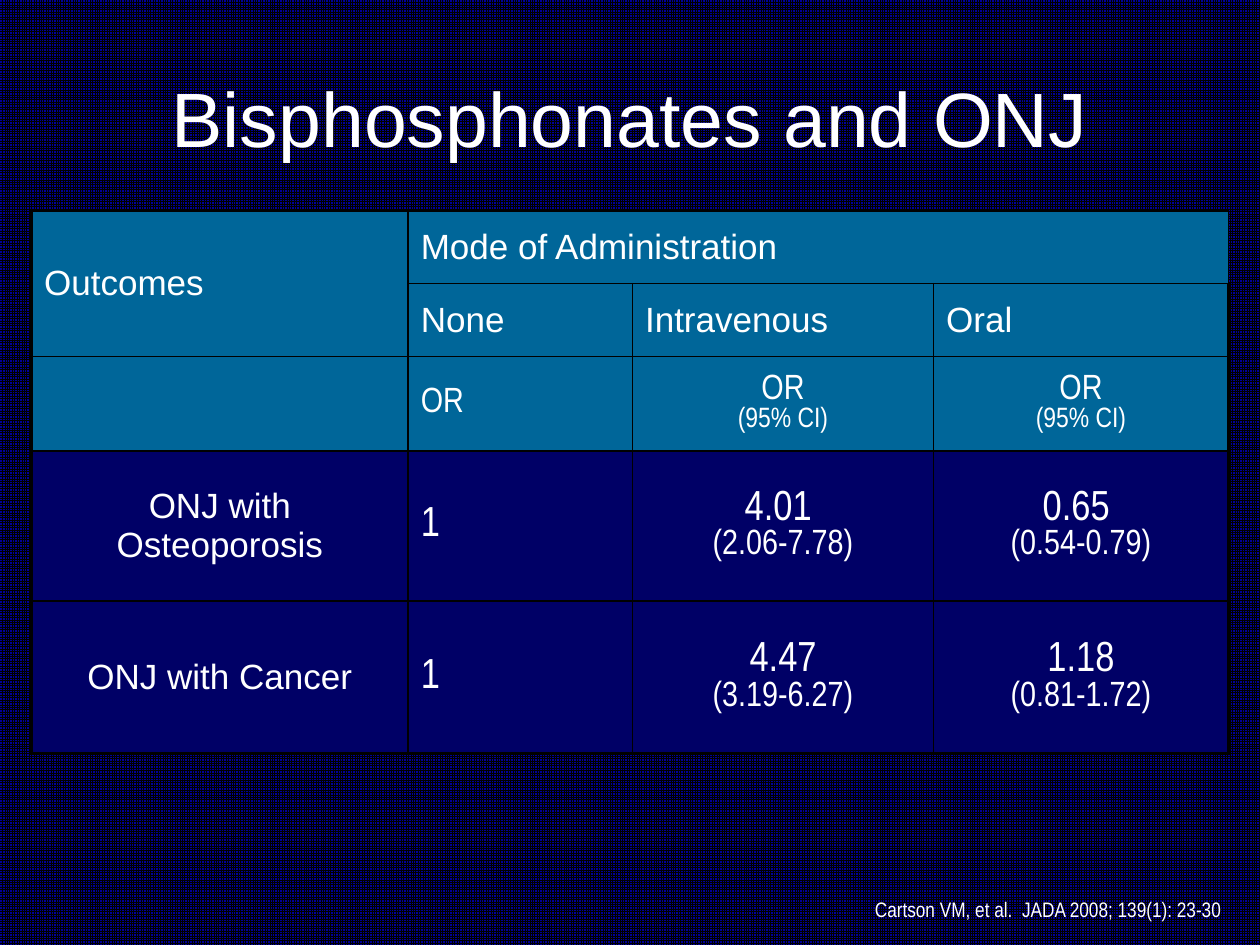
from dataclasses import dataclass
from lxml.etree import SubElement as Sub
from pptx import Presentation
from pptx.dml.color import RGBColor as Rgb
from pptx.enum.dml import MSO_PATTERN as Pattern
from pptx.enum.text import MSO_ANCHOR as Anchor, PP_ALIGN as Align
from pptx.oxml.ns import qn
from pptx.util import Inches, Pt

HUES = {"ink": "FFFFFF", "line": "000000", "back": "000099",
        "head": "006699", "body": "000066"}
WIDE, SLIM = "Arial", "Arial Narrow"
COLS = [2.99, 1.78, 2.39, 2.34]
ROWS = [0.58, 0.58, 0.75, 1.19, 1.21]
HEADS = 3


@dataclass
class Line:
    text: str
    size: float
    face: str = WIDE


@dataclass
class Item:
    row: int
    col: int
    lines: list[Line]
    align: Align = Align.LEFT


def hue(name: str) -> Rgb:
    return Rgb.from_string(HUES[name])


def write(frame, lines: list[Line], align: Align) -> None:
    frame.word_wrap = True
    for i, line in enumerate(lines):
        para = frame.add_paragraph() if i else frame.paragraphs[0]
        para.alignment = align
        run = para.add_run()
        run.text = line.text
        run.font.size = Pt(line.size)
        run.font.name = line.face
        run.font.color.rgb = hue("ink")


def label(slide, box: tuple, line: Line, align: Align, anchor: Anchor) -> None:
    frame = slide.shapes.add_textbox(*map(Inches, box)).text_frame
    frame.vertical_anchor = anchor
    write(frame, [line], align)


def edge(cell, side: str, width: float) -> None:
    line = Sub(cell._tc.get_or_add_tcPr(), qn(f"a:ln{side}"), w=str(Pt(width)))
    Sub(Sub(line, qn("a:solidFill")), qn("a:srgbClr"), val=HUES["line"])


def style(cell, row: int, col: int) -> None:
    outer = {"L": col == 0, "R": col == len(COLS) - 1,
             "T": row == 0, "B": row == len(ROWS) - 1}
    for side, rim in outer.items():
        edge(cell, side, 2.25 if rim else 1)
    cell.fill.solid()
    cell.fill.fore_color.rgb = hue("head" if row < HEADS else "body")
    cell.vertical_anchor = Anchor.MIDDLE


def pair(row: int, col: int, top: str, low: str, size: float) -> Item:
    lines = [Line(top, size, SLIM), Line(low, size - 4, SLIM)]
    return Item(row, col, lines, Align.CENTER)


ITEMS = [
    Item(0, 0, [Line("Outcomes", 20)]),
    Item(0, 1, [Line("Mode of Administration", 20)]),
    *[Item(1, i, [Line(text, 20)])
      for i, text in enumerate(["None", "Intravenous", "Oral"], 1)],
    Item(2, 1, [Line("OR", 20, SLIM)]),
    *[pair(2, col, "OR", "(95% CI)", 20) for col in (2, 3)],
    *[Item(row, 0, [Line(text, 20)], Align.CENTER)
      for row, text in enumerate(["ONJ with Osteoporosis", "ONJ with Cancer"], HEADS)],
    *[Item(row, 1, [Line("1", 24, SLIM)]) for row in (3, 4)],
    pair(3, 2, "4.01 ", "(2.06-7.78)", 24),
    pair(3, 3, "0.65 ", "(0.54-0.79)", 24),
    pair(4, 2, "4.47", "(3.19-6.27)", 24),
    pair(4, 3, "1.18", "(0.81-1.72)", 24),
]


def grid(slide) -> None:
    box = (0.25, 1.67, sum(COLS), sum(ROWS))
    table = slide.shapes.add_table(len(ROWS), len(COLS), *map(Inches, box)).table
    table.first_row = table.horz_banding = False
    for col, width in zip(table.columns, COLS):
        col.width = Inches(width)
    for row, height in zip(table.rows, ROWS):
        row.height = Inches(height)
    for row in range(len(ROWS)):
        for col in range(len(COLS)):
            style(table.cell(row, col), row, col)
    table.cell(0, 0).merge(table.cell(1, 0))
    table.cell(0, 1).merge(table.cell(0, 3))
    for item in ITEMS:
        write(table.cell(item.row, item.col).text_frame, item.lines, item.align)


def main() -> None:
    deck = Presentation()
    deck.slide_width, deck.slide_height = Inches(10), Inches(7.5)
    slide = deck.slides.add_slide(deck.slide_layouts[6])
    fill = slide.background.fill
    fill.patterned()
    fill.pattern = Pattern.SMALL_GRID
    fill.fore_color.rgb = hue("line")
    fill.back_color.rgb = hue("back")
    label(slide, (0.5, 0.3, 9, 1.25), Line("Bisphosphonates and ONJ", 44),
          Align.CENTER, Anchor.MIDDLE)
    label(slide, (4.33, 7.07, 5.5, 0.3),
          Line("Cartson VM, et al.  JADA 2008; 139(1): 23-30 ", 12, SLIM),
          Align.RIGHT, Anchor.TOP)
    grid(slide)
    deck.save("out.pptx")


if __name__ == "__main__":
    main()
